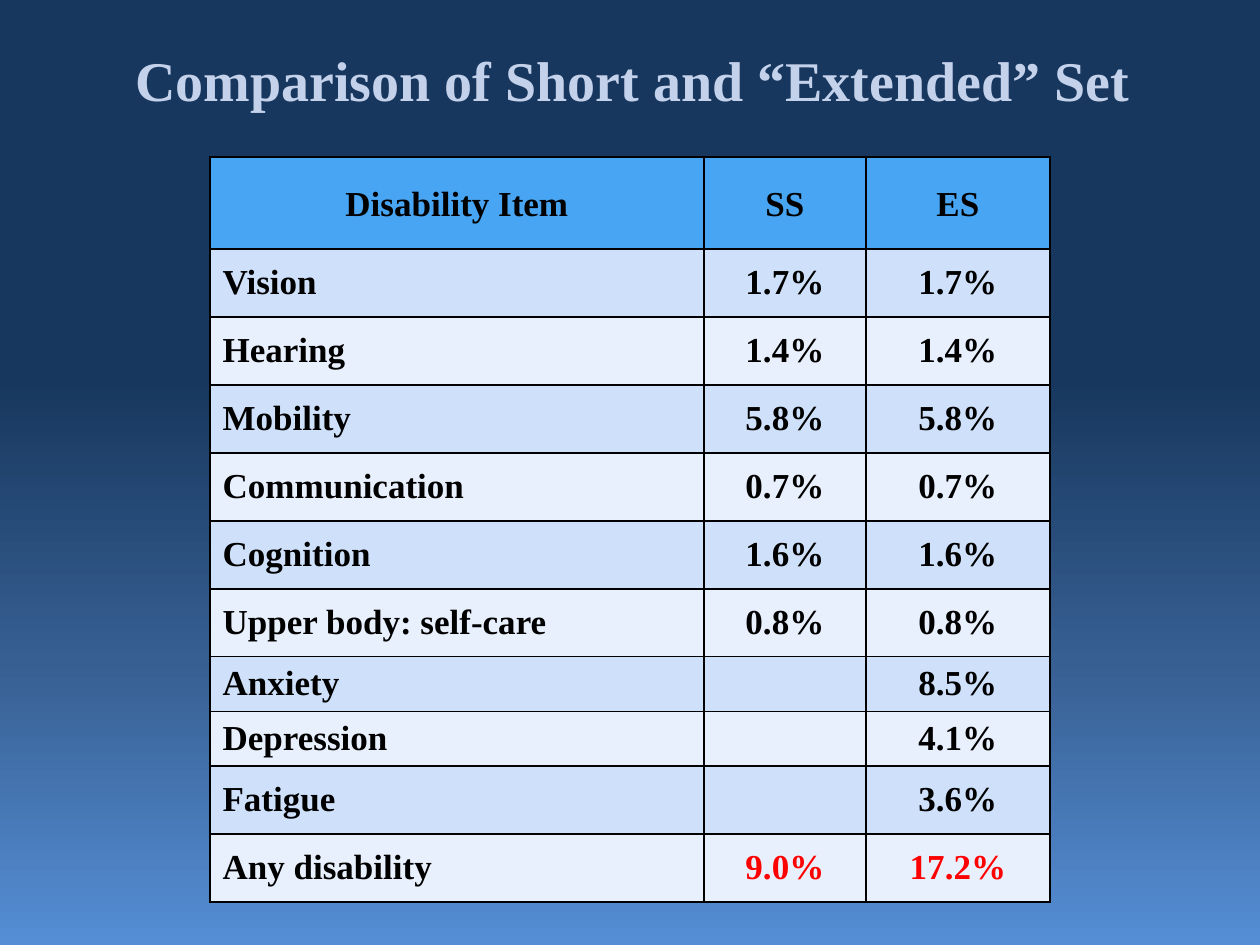
from dataclasses import dataclass

from lxml.etree import SubElement
from pptx import Presentation
from pptx.dml.color import RGBColor as RGB
from pptx.enum.text import MSO_ANCHOR as ANCHOR, PP_ALIGN as ALIGN
from pptx.oxml import parse_xml
from pptx.oxml.ns import nsdecls, qn
from pptx.util import Emu, Pt

SCALE = 914400 / 126


@dataclass(frozen=True)
class Theme:
    """Colours, font and type sizes of the slide."""
    font: str = "Times New Roman"
    title_size: int = 32
    body_size: int = 20
    header_leading: int = 24
    border_width: int = 1
    title: str = "C4D1EB"
    text: str = "000000"
    total: str = "FF0000"
    border: str = "000000"
    header: str = "47A5F3"
    bands: tuple = ("CFE1FA", "E9F0FD")
    backdrop: tuple = ((0, "17375E"), (40, "17375E"), (70, "375F92"), (100, "558ED5"))


THEME = Theme()
HEADINGS = ("Disability Item", "SS", "ES")
ITEMS = (
    ("Vision", "1.7%", "1.7%"),
    ("Hearing", "1.4%", "1.4%"),
    ("Mobility", "5.8%", "5.8%"),
    ("Communication", "0.7%", "0.7%"),
    ("Cognition", "1.6%", "1.6%"),
    ("Upper body: self-care", "0.8%", "0.8%"),
    ("Anxiety", "", "8.5%"),
    ("Depression", "", "4.1%"),
    ("Fatigue", "", "3.6%"),
    ("Any disability", "9.0%", "17.2%"),
)
COLUMN_WIDTHS = (494, 162, 184)
HEADER_HEIGHT, ROW_HEIGHT, SHORT_HEIGHT = 92, 68, 51
SHORT_ITEMS = ("Anxiety", "Depression")


def px(n):
    """Turn pixels into EMU."""
    return Emu(round(n * SCALE))


def write(tf, text, size=THEME.body_size, color=THEME.text, align=ALIGN.CENTER, leading=None):
    """Put one bold formatted paragraph into a text frame."""
    p = tf.paragraphs[0]
    p.alignment = align
    if leading:
        p.line_spacing = Pt(leading)
    r = p.add_run()
    r.text = text
    r.font.name, r.font.size, r.font.bold = THEME.font, Pt(size), True
    r.font.color.rgb = RGB.from_string(color)


def paint_background(s):
    """Fill the slide with the vertical gradient."""
    fill = s.background.fill
    fill.gradient()
    fill.gradient_angle = 270
    stops = s.element.find(".//" + qn("a:gsLst"))
    for stop in list(stops):
        stops.remove(stop)
    for percent, color in THEME.backdrop:
        stop = SubElement(stops, qn("a:gs"), pos=str(percent * 1000))
        SubElement(stop, qn("a:srgbClr"), val=color)


def add_title(s, x, y, w, h):
    """Place the heading in the given box."""
    sp = s.shapes.add_textbox(px(x), px(y), px(w), px(h))
    tf = sp.text_frame
    tf.word_wrap = True
    tf.vertical_anchor = ANCHOR.MIDDLE
    write(tf, "Comparison of Short and “Extended” Set ", size=THEME.title_size, color=THEME.title)


def style_cell(cell, color):
    """Give a cell its fill, its anchor and four borders."""
    cell.fill.solid()
    cell.fill.fore_color.rgb = RGB.from_string(color)
    cell.vertical_anchor = ANCHOR.MIDDLE
    props = cell._tc.get_or_add_tcPr()
    for i, side in enumerate("LRTB"):
        props.insert(i, parse_xml(
            f'<a:ln{side} {nsdecls("a")} w="{Pt(THEME.border_width)}">'
            f'<a:solidFill><a:srgbClr val="{THEME.border}"/></a:solidFill></a:ln{side}>'))


def add_comparison(s, x, y):
    """Place the table of rates with its top left corner at x, y."""
    heights = [HEADER_HEIGHT] + [
        SHORT_HEIGHT if item[0] in SHORT_ITEMS else ROW_HEIGHT for item in ITEMS]
    rows = (HEADINGS,) + ITEMS
    table = s.shapes.add_table(len(rows), len(HEADINGS), px(x), px(y),
                               px(sum(COLUMN_WIDTHS)), px(sum(heights))).table
    table.first_row = table.horz_banding = False
    for column, width in zip(table.columns, COLUMN_WIDTHS):
        column.width = px(width)
    for i, (values, height) in enumerate(zip(rows, heights)):
        table.rows[i].height = px(height)
        for j, value in enumerate(values):
            cell = table.cell(i, j)
            style_cell(cell, THEME.bands[(i - 1) % 2] if i else THEME.header)
            if value:
                write(cell.text_frame, value,
                      color=THEME.total if j and i == len(ITEMS) else THEME.text,
                      align=ALIGN.LEFT if i and not j else ALIGN.CENTER,
                      leading=None if i else THEME.header_leading)


def main():
    """Build the slide and save it."""
    prs = Presentation()
    prs.slide_width, prs.slide_height = px(1260), px(945)
    s = prs.slides.add_slide(prs.slide_layouts[6])
    paint_background(s)
    add_title(s, 73, 32, 1134, 94)
    add_comparison(s, 210, 157)
    prs.save("out.pptx")


if __name__ == "__main__":
    main()
